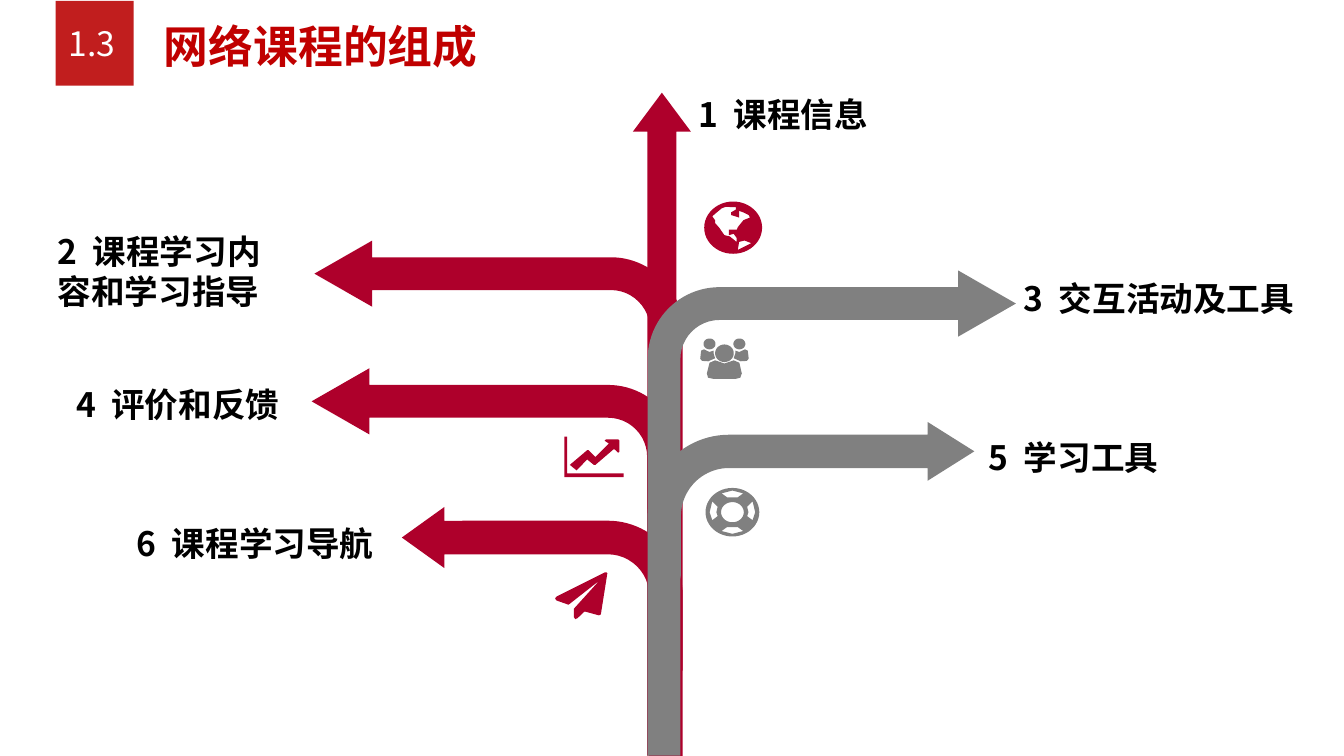
"""Build the slide on the components of an online course."""
from dataclasses import dataclass
from math import cos, pi, sin

from lxml.etree import SubElement
from pptx import Presentation
from pptx.dml.color import RGBColor
from pptx.enum.shapes import MSO_SHAPE
from pptx.enum.text import MSO_ANCHOR, MSO_AUTO_SIZE, PP_ALIGN
from pptx.oxml.ns import qn
from pptx.util import Pt

FONT = "Noto Sans CJK SC"
CRIMSON, GRAY, BLACK, WHITE = "AE002B", "808080", "000000", "FFFFFF"
Contour = list[tuple[float, float]]


@dataclass
class Arrow:
    left: float
    top: float
    width: float
    height: float
    color: str
    adjustments: tuple[float, ...]
    flipped: bool = False
    preset: MSO_SHAPE = MSO_SHAPE.BENT_ARROW


@dataclass
class Label:
    text: str
    left: float
    top: float
    width: float
    height: float = 52.5
    wrap: bool = True


@dataclass
class Icon:
    left: float
    top: float
    color: str
    contours: list[Contour]


def color_of(value: str) -> RGBColor:
    return RGBColor.from_string(value)


def paint(shape, color: str) -> None:
    shape.fill.solid()
    shape.fill.fore_color.rgb = color_of(color)
    shape.line.fill.background()
    shape.shadow.inherit = False


def write_text(shape, text: str, size: float = 18, color: str = BLACK, bold: bool = True,
               anchor=MSO_ANCHOR.TOP, align=PP_ALIGN.LEFT, wrap: bool = True) -> None:
    frame = shape.text_frame
    frame.word_wrap = wrap
    frame.auto_size = MSO_AUTO_SIZE.NONE
    frame.vertical_anchor = anchor
    paragraph = frame.paragraphs[0]
    paragraph.alignment = align
    paragraph.line_spacing = 1.0
    paragraph.space_before = Pt(0)
    run = paragraph.add_run()
    run.text = text
    run.font.size = Pt(size)
    run.font.bold = bold
    run.font.color.rgb = color_of(color)
    run.font.name = FONT
    SubElement(run.font._element, qn("a:ea"), typeface=FONT)


def draw_arrow(slide, arrow: Arrow) -> None:
    shape = slide.shapes.add_shape(arrow.preset, Pt(arrow.left), Pt(arrow.top),
                                   Pt(arrow.width), Pt(arrow.height))
    for index, value in enumerate(arrow.adjustments):
        shape.adjustments[index] = value
    if arrow.flipped:
        shape.element.spPr.get_or_add_xfrm().set("flipH", "1")
    paint(shape, arrow.color)


def draw_label(slide, label: Label) -> None:
    box = slide.shapes.add_textbox(Pt(label.left), Pt(label.top), Pt(label.width), Pt(label.height))
    write_text(box, label.text, wrap=label.wrap)


def draw_icon(slide, icon: Icon) -> None:
    builder = None
    for contour in icon.contours:
        points = [(Pt(icon.left + x), Pt(icon.top + y)) for x, y in contour]
        if builder is None:
            builder = slide.shapes.build_freeform(*points[0])
        else:
            builder.move_to(*points[0])
        builder.add_line_segments(points[1:], close=True)
    paint(builder.convert_to_shape(), icon.color)


def ellipse(x: float, y: float, radius_x: float, radius_y: float, steps: int = 48) -> Contour:
    angles = [2 * pi * step / steps for step in range(steps)]
    return [(x + radius_x * cos(angle), y + radius_y * sin(angle)) for angle in angles]


def mirror_x(contour: Contour, width: float) -> Contour:
    return [(width - x, y) for x, y in contour]


def mirror_y(contour: Contour, height: float) -> Contour:
    return [(x, height - y) for x, y in contour]


WIDE_BEND = (0.089, 0.09, 0.157, 0.195)
ARROWS = [
    Arrow(168.5, 128.9, 197.3, 230.4, CRIMSON, WIDE_BEND, True),
    Arrow(339.1, 49.7, 31, 314.6, CRIMSON, (0.5, 0.671), preset=MSO_SHAPE.UP_ARROW),
    Arrow(167, 197.3, 197.3, 207.5, CRIMSON, WIDE_BEND, True),
    Arrow(347, 226.1, 175, 178.7, GRAY, (0.102, 0.09, 0.143, 0.249)),
    Arrow(215.3, 271.6, 150.5, 133.3, CRIMSON, (0.135, 0.123, 0.171, 0.301), True),
    Arrow(347, 144.9, 197.3, 260, GRAY, WIDE_BEND),
]

LABELS = [
    Label("1  课程信息", 367.2, 46.8, 200),
    Label("2  课程学习内容和学习指导", 23.8, 120.2, 131.8),
    Label("3  交互活动及工具", 541.4, 145.4, 164.2, 28.8, wrap=False),
    Label("4  评价和反馈", 33.8, 202.3, 164.9),
    Label("5  学习工具", 522.7, 230.4, 180),
    Label("6  课程学习导航", 66.2, 276.5, 164.9),
]

PLANE = [(28, 0.5), (24.5, 22.5), (23.5, 23), (15.8, 20.9), (12, 24.5), (10.8, 25),
         (10.1, 24), (10.1, 19.4), (23.8, 4.3), (7.2, 17.3), (0.7, 15), (0, 14),
         (0.7, 13), (26.6, 0), (27.6, 0)]
CHART_AXES = [(0, 0), (1.4, 0), (1.4, 19.6), (31.7, 19.6), (31.7, 21.6), (0, 21.6)]
CHART_TREND = [(29.5, 2), (29.5, 8), (28.8, 8.6), (26.6, 6.5), (16.6, 15.1), (15.8, 15.1),
               (12.2, 12.2), (6.5, 18), (2.9, 15.1), (12.2, 7.2), (13, 7.2), (16.6, 10.8),
               (23.8, 3.6), (21.6, 2.2), (22.3, 1.4), (28.8, 1.4)]
NORTH_AMERICA = [(21, 10), (24.5, 8.6), (23.8, 7.2), (20.9, 5.8), (18.7, 5), (18.7, 8.6),
                 (14.4, 7.2), (14.4, 5.8), (17, 4.3), (17, 3), (11.5, 2.9), (9.4, 3.6),
                 (4.3, 7.9), (5.8, 10), (5.8, 11.5), (8, 14), (10.8, 18), (13.7, 18.7),
                 (17.3, 21.6), (17.3, 19.4), (15.8, 17.3), (13.2, 18), (13.2, 15.1),
                 (17.5, 15.1), (18, 13.7)]
SOUTH_AMERICA = [(25.2, 22.3), (21.6, 20.9), (18.7, 21.6), (18, 25.9)]
BUOY_SIDE = [(6.5, 15.1), (5.8, 13), (6.5, 10.1), (3.6, 7.2), (2.2, 13), (3.6, 17.3)]
BUOY_TOP = [(8.6, 2.9), (11.5, 5), (17.3, 5), (20.2, 2.9), (14.4, 1.4)]
PERSON_BODY = [(3.6, 18.7), (5, 13), (8, 11.7), (13, 13.4), (18, 11.7), (21, 13),
               (22.3, 18.7), (21.5, 21), (19, 21.6), (7, 21.6), (4.2, 21)]
SIDE_HEAD = ellipse(5, 2.9, 3.2, 2.9)
SIDE_BODY = [(4.3, 12.2), (1, 12), (0, 10.8), (0.5, 6.5), (2, 5.8), (5, 7.2),
             (7.2, 6.5), (7.2, 8), (8, 10.6)]

ICONS = [
    Icon(297.4, 306.7, CRIMSON, [PLANE]),
    Icon(302.4, 234, CRIMSON, [CHART_AXES, CHART_TREND]),
    Icon(377.3, 108, CRIMSON, [ellipse(15.5, 14, 15.5, 14), NORTH_AMERICA, SOUTH_AMERICA]),
    Icon(378, 261.4, GRAY, [ellipse(14.4, 13, 14.4, 13), ellipse(14.4, 13, 6.1, 5.4),
                            BUOY_SIDE, mirror_x(BUOY_SIDE, 28.8),
                            BUOY_TOP, mirror_y(BUOY_TOP, 26)]),
    Icon(375.1, 181.4, GRAY, [ellipse(13, 7.9, 5, 4.7), PERSON_BODY,
                              SIDE_HEAD, mirror_x(SIDE_HEAD, 26),
                              SIDE_BODY, mirror_x(SIDE_BODY, 26)]),
]


def main() -> None:
    presentation = Presentation()
    presentation.slide_width, presentation.slide_height = Pt(720), Pt(405)
    slide = presentation.slides.add_slide(presentation.slide_layouts[5])

    for arrow in ARROWS:
        draw_arrow(slide, arrow)
    for icon in ICONS:
        draw_icon(slide, icon)
    for label in LABELS:
        draw_label(slide, label)

    title = slide.shapes.title
    title.left, title.top, title.width, title.height = Pt(80.6), Pt(6.5), Pt(525.6), Pt(36)
    write_text(title, "网络课程的组成", size=24, color="C00000")

    badge = slide.shapes.add_shape(MSO_SHAPE.RECTANGLE, Pt(29.8), Pt(0.5), Pt(41.8), Pt(45.4))
    paint(badge, "C11E1E")
    write_text(badge, "1.3", color=WHITE, bold=False, anchor=MSO_ANCHOR.MIDDLE)

    presentation.save("out.pptx")


if __name__ == "__main__":
    main()
